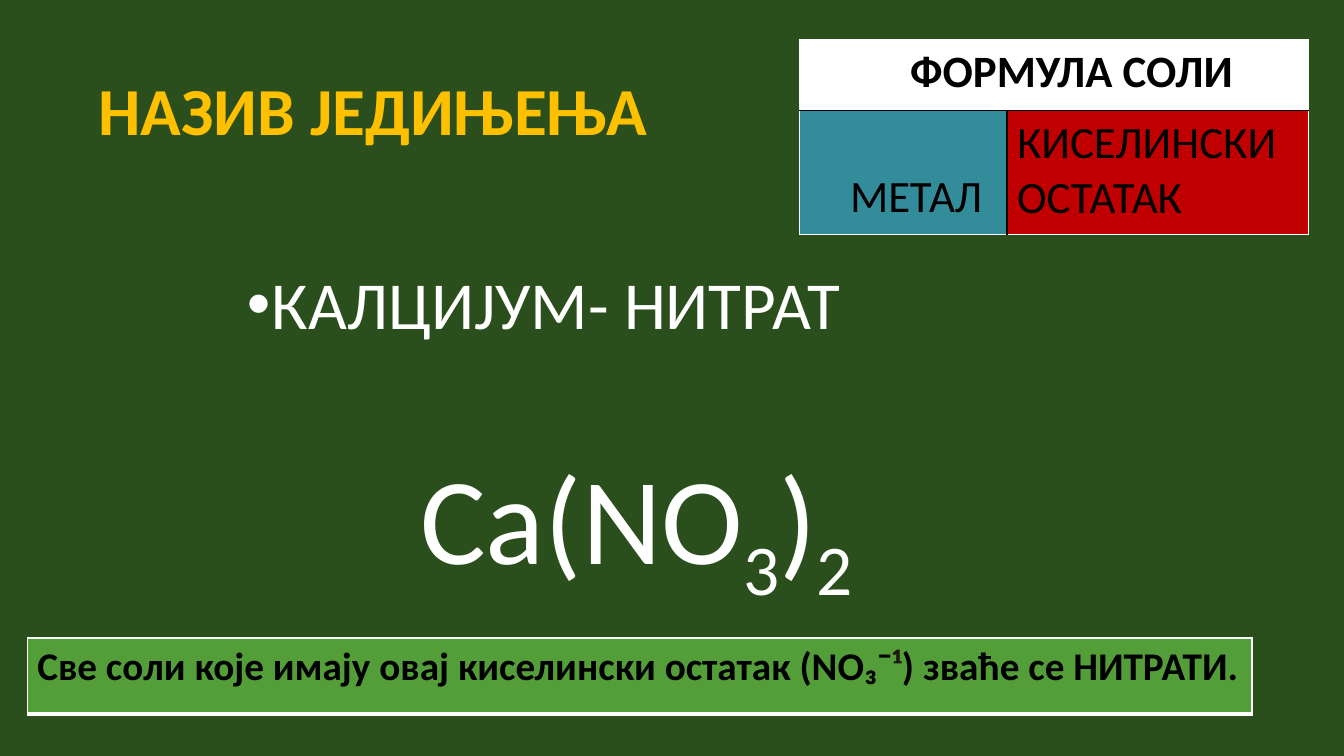
from lxml import etree
from pptx import Presentation
from pptx.dml.color import RGBColor
from pptx.enum import text
from pptx.oxml import ns
from pptx.util import Pt

WHITE, BLACK = "FFFFFF", "000000"


def paint(fill, color):
    fill.solid()
    fill.fore_color.rgb = RGBColor.from_string(color)


def write(paragraph, wording, color, **format_values):
    run = paragraph.add_run()
    run.text = wording
    paint(run.font.fill, color)
    for name, value in {"name": "Calibri", "bold": False, **format_values}.items():
        setattr(run.font, name, value)
    return run


deck = Presentation()
deck.slide_width, deck.slide_height = Pt(960), Pt(540)
slide = deck.slides.add_slide(deck.slide_layouts[6])
paint(slide.background.fill, "2A4F1C")

frames = []
for box, anchor in [
    ((63.36, 30.24, 830.88, 102.24), text.MSO_ANCHOR.MIDDLE),
    ((169.2, 190.08, 684, 302.4), text.MSO_ANCHOR.TOP),
    ((293.04, 311.76, 436.32, 113.76), text.MSO_ANCHOR.TOP),
]:
    frame = slide.shapes.add_textbox(*map(Pt, box)).text_frame
    frame.word_wrap = True
    frame.vertical_anchor = anchor
    frames.append(frame)
title, compound, formula = [frame.paragraphs[0] for frame in frames]

title.line_spacing = compound.line_spacing = 0.9
write(title, "НАЗИВ ЈЕДИЊЕЊА", "FFC000", size=Pt(48), bold=True)

compound.space_before = Pt(10)
write(compound, "КАЛЦИЈУМ- НИТРАТ", WHITE, size=Pt(48))
bullet_format = compound._p.get_or_add_pPr()
bullet_format.set("marL", str(Pt(18)))
bullet_format.set("indent", str(Pt(-18)))
etree.SubElement(bullet_format, ns.qn("a:buFont")).set("typeface", "Arial")
etree.SubElement(bullet_format, ns.qn("a:buChar")).set("char", "•")

frames[2].auto_size = text.MSO_AUTO_SIZE.SHAPE_TO_FIT_TEXT
for symbol, baseline in [("Ca(NO", 0), ("3", -25000), (")", 0), ("2", -25000)]:
    part = write(formula, symbol, WHITE, size=Pt(88))
    part._r.get_or_add_rPr().set("baseline", str(baseline))

salt = slide.shapes.add_table(2, 2, *map(Pt, (570.96, 28.08, 363.6, 139.68))).table
rule = slide.shapes.add_table(1, 1, *map(Pt, (19.44, 455.76, 874.8, 54))).table
for column, width in zip(salt.columns, (148.32, 215.28)):
    column.width = Pt(width)
for row, height in zip(salt.rows, (51.12, 88.56)):
    row.height = Pt(height)
for table in (salt, rule):
    table.first_row = table.horz_banding = False
salt.cell(0, 0).merge(salt.cell(0, 1))

thin_white, thin_black, thick_white = (WHITE, 1), (BLACK, 1), (WHITE, 3)
header_edges = (thin_white, thin_white, thin_white, thin_black)
for cell, color, edges in [
    (salt.cell(0, 0), WHITE, header_edges),
    (salt.cell(0, 1), WHITE, header_edges),
    (salt.cell(1, 0), "328C99", (thin_white, thin_black, thin_black, thin_white)),
    (salt.cell(1, 1), "C00000", (thin_black, thin_white, thin_black, thin_white)),
    (rule.cell(0, 0), "549E39", (thin_white, thin_white, thin_white, thick_white)),
]:
    paint(cell.fill, color)
    cell_format = cell._tc.get_or_add_tcPr()
    for place, (side, (edge_color, weight)) in enumerate(zip("LRTB", edges)):
        edge = etree.Element(ns.qn(f"a:ln{side}"), w=str(Pt(weight)))
        edge_fill = etree.SubElement(edge, ns.qn("a:solidFill"))
        etree.SubElement(edge_fill, ns.qn("a:srgbClr")).set("val", edge_color)
        cell_format.insert(place, edge)

for row, column, wording, bold, indent in [
    (0, 0, "ФОРМУЛА СОЛИ", True, 72),
    (1, 0, "МЕТАЛ", False, 29),
    (1, 1, "КИСЕЛИНСКИ ОСТАТАК", False, 0),
]:
    label = salt.cell(row, column).text_frame.paragraphs[0]
    label._p.get_or_add_pPr().set("marL", str(Pt(indent)))
    write(label, wording, BLACK, size=Pt(32), bold=bold)
metal = salt.cell(1, 0)
metal.vertical_anchor = text.MSO_ANCHOR.BOTTOM
metal.margin_bottom = Pt(7)

for wording, color in [
    ("Све соли које имају овај киселински остатак (NO₃¯", BLACK),
    ("¹", "1B1810"),
    (") зваће се НИТРАТИ.", BLACK),
]:
    write(rule.cell(0, 0).text_frame.paragraphs[0], wording, color, size=Pt(28), bold=True)

deck.save("out.pptx")
